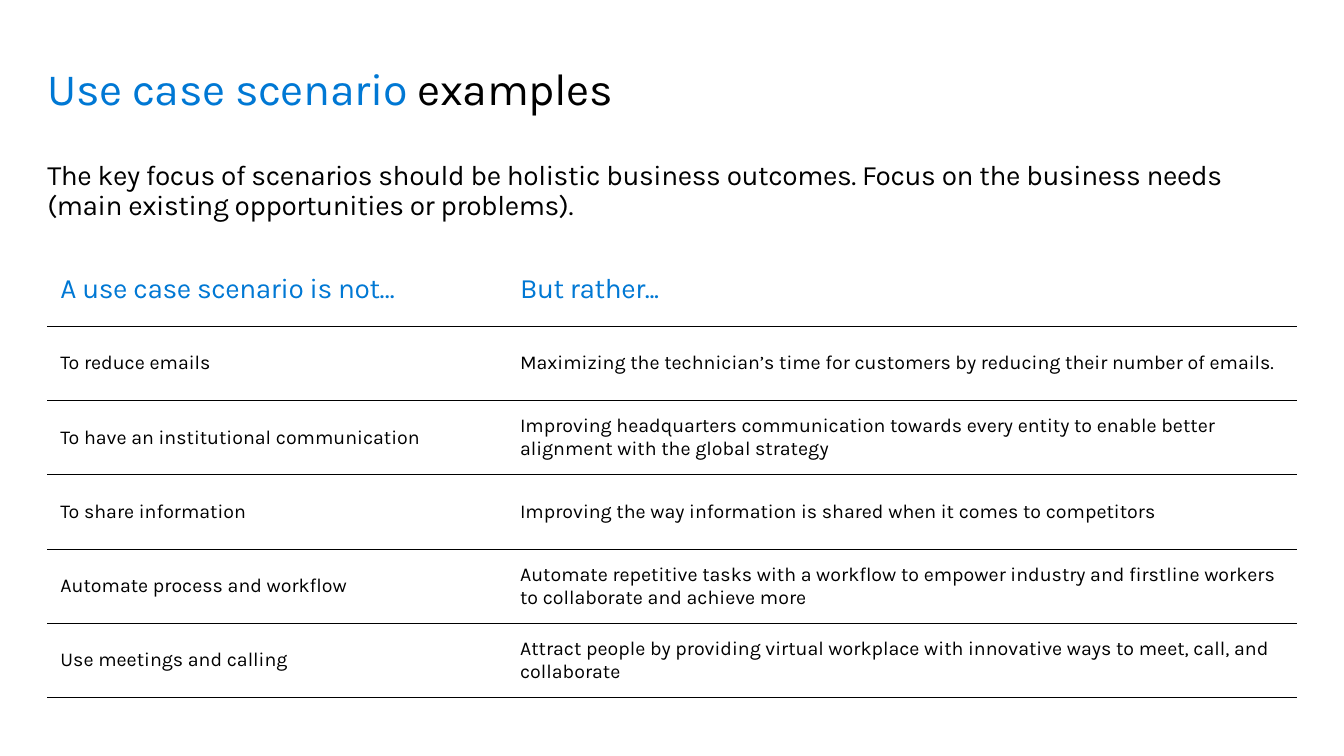
import pptx
import pptx.dml.color
import pptx.enum.text
import pptx.oxml
import pptx.oxml.ns
import pptx.util

Pt = pptx.util.Pt
RGBColor = pptx.dml.color.RGBColor
ANCHOR = pptx.enum.text.MSO_ANCHOR

# Content
TITLE = [("Use case scenario", "accent"), (" examples", "ink")]
KEY_FOCUS = (
    "The key focus of scenarios should be holistic business outcomes. "
    "Focus on the business needs (main existing opportunities or problems)."
)
HEADINGS = ("A use case scenario is not…", "But rather...")
SCENARIOS = [
    ("To reduce emails",
     "Maximizing the technician’s time for customers by reducing their number of emails."),
    ("To have an institutional communication",
     "Improving headquarters communication towards every entity to enable better "
     "alignment with the global strategy"),
    ("To share information",
     "Improving the way information is shared when it comes to competitors"),
    ("Automate process and workflow",
     "Automate repetitive tasks with a workflow to empower industry and firstline "
     "workers to collaborate and achieve more"),
    ("Use meetings and calling",
     "Attract people by providing virtual workplace with innovative ways to meet, "
     "call, and collaborate"),
]

# Format
FONT = "Karla"
COLORS = {"accent": RGBColor(0x00, 0x78, 0xD4), "ink": RGBColor(0, 0, 0)}
WHITE = RGBColor(0xFF, 0xFF, 0xFF)

# Layout, in points
LEFT = 33.8
WIDTH = 892.8
COLUMN_WIDTHS = (328.3, 564.5)
TABLE_TOP = 180
ROW_HEIGHT = 53.05


def add_text(paragraph, text, size=14, color="ink", spacing=0):
    """Append a run; spacing is in hundredths of a point."""
    run = paragraph.add_run()
    run.text = text
    run.font.name = FONT
    run.font.size = Pt(size)
    run.font.bold = False
    run.font.color.rgb = COLORS[color]
    run.font._element.set("spc", str(spacing))


def set_insets(frame, left, top, right, bottom):
    frame.margin_left, frame.margin_top = Pt(left), Pt(top)
    frame.margin_right, frame.margin_bottom = Pt(right), Pt(bottom)


def set_borders(cell, top, bottom):
    """Rule the cell above and below; a width of 0 draws no line."""
    widths = {"lnL": 0, "lnR": 0, "lnT": top, "lnB": bottom}
    for position, (side, width) in enumerate(widths.items()):
        paint = '<a:solidFill><a:srgbClr val="000000"/></a:solidFill>' if width else "<a:noFill/>"
        line = pptx.oxml.parse_xml(
            f'<a:{side} {pptx.oxml.ns.nsdecls("a")} w="{Pt(width)}">{paint}</a:{side}>')
        cell._tc.get_or_add_tcPr().insert(position, line)


def add_title(slide):
    title = slide.shapes.title
    title.left, title.top, title.width, title.height = Pt(LEFT), Pt(34.6), Pt(WIDTH), Pt(59.8)
    frame = title.text_frame
    set_insets(frame, 0, 13, 0, 0)
    frame.word_wrap = True
    frame.auto_size = pptx.enum.text.MSO_AUTO_SIZE.NONE
    frame.vertical_anchor = ANCHOR.TOP
    paragraph = frame.paragraphs[0]
    paragraph.alignment = pptx.enum.text.PP_ALIGN.LEFT
    paragraph.line_spacing = 0.9
    for text, color in TITLE:
        add_text(paragraph, text, size=32, color=color, spacing=-30)


def add_key_focus(slide):
    box = slide.shapes.add_textbox(Pt(LEFT), Pt(111.6), Pt(900.7), Pt(51.1))
    frame = box.text_frame
    frame.word_wrap = True
    set_insets(frame, 0, 3.6, 7.2, 3.6)
    paragraph = frame.paragraphs[0]
    paragraph.line_spacing = 0.9
    paragraph.space_after = Pt(3)
    add_text(paragraph, KEY_FOCUS, size=20, spacing=-30)


def add_scenarios(slide):
    rows = [HEADINGS, *SCENARIOS]
    table = slide.shapes.add_table(
        len(rows), len(HEADINGS), Pt(LEFT), Pt(TABLE_TOP),
        Pt(WIDTH), Pt(ROW_HEIGHT * len(rows))).table
    table.horz_banding = False
    for column, width in zip(table.columns, COLUMN_WIDTHS):
        column.width = Pt(width)
    for r, texts in enumerate(rows):
        table.rows[r].height = Pt(ROW_HEIGHT)
        is_heading = r == 0
        is_last = r == len(rows) - 1
        for c, text in enumerate(texts):
            cell = table.cell(r, c)
            set_insets(cell, 9.4, 3.6, 9.4, 3.6)
            cell.vertical_anchor = ANCHOR.MIDDLE
            if is_heading:
                cell.fill.solid()
                cell.fill.fore_color.rgb = WHITE
            else:
                cell.fill.background()
            set_borders(cell, top=0 if is_heading else 0.5, bottom=1 if is_last else 0.5)
            style = {"size": 20, "color": "accent", "spacing": -30} if is_heading else {}
            add_text(cell.text_frame.paragraphs[0], text, **style)


def main():
    deck = pptx.Presentation()
    deck.slide_width, deck.slide_height = Pt(960), Pt(540)
    slide = deck.slides.add_slide(deck.slide_layouts[5])
    add_title(slide)
    add_key_focus(slide)
    add_scenarios(slide)
    deck.save("out.pptx")


if __name__ == "__main__":
    main()
